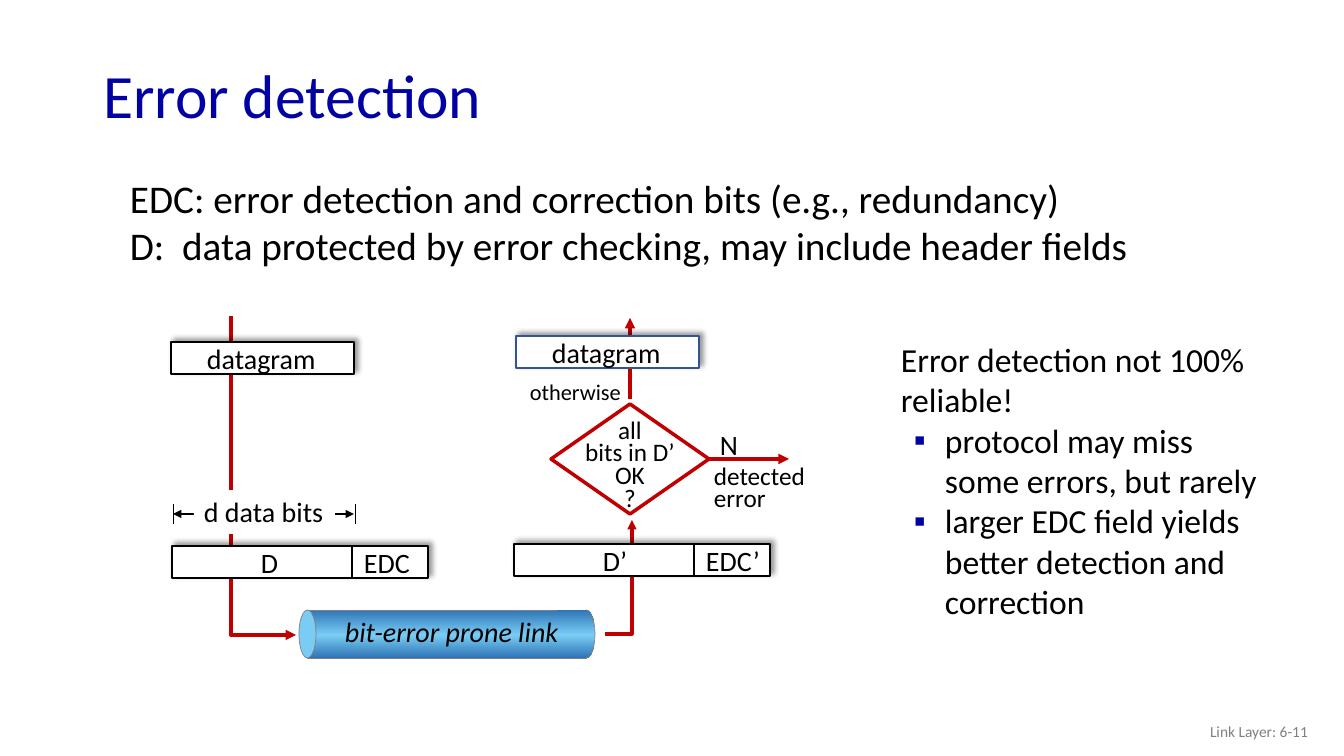
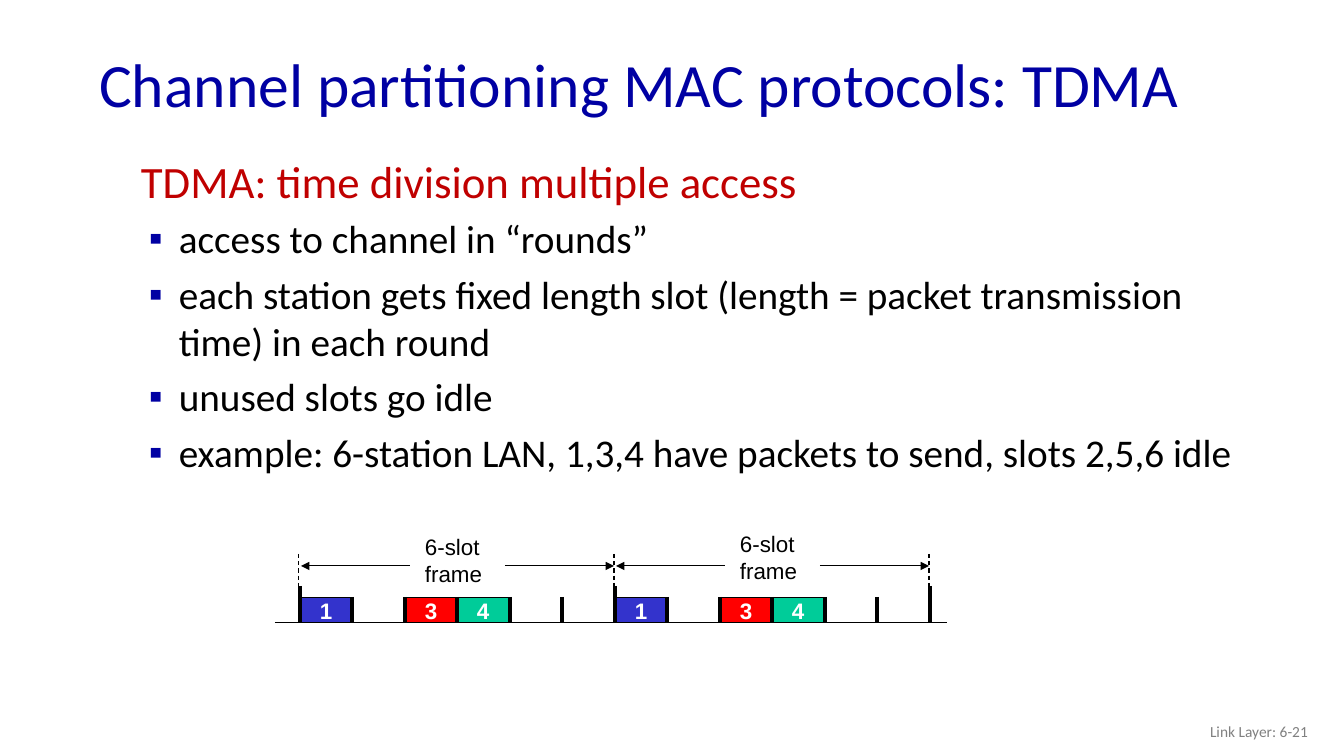
from copy import deepcopy

from lxml import etree
from pptx import Presentation
from pptx.dml.color import RGBColor
from pptx.enum.dml import MSO_LINE
from pptx.enum.shapes import MSO_CONNECTOR, MSO_SHAPE
from pptx.enum.text import MSO_ANCHOR, PP_ALIGN
from pptx.oxml.ns import qn
from pptx.util import Pt

PX = 9071  # EMU per px, 100.8 px to the inch
LEFT, CENTER, RIGHT = PP_ALIGN.LEFT, PP_ALIGN.CENTER, PP_ALIGN.RIGHT
MIDDLE = MSO_ANCHOR.MIDDLE
RECTANGLE, OVAL, DIAMOND = MSO_SHAPE.RECTANGLE, MSO_SHAPE.OVAL, MSO_SHAPE.DIAMOND
STRAIGHT = MSO_CONNECTOR.STRAIGHT
DASH = MSO_LINE.DASH

COLORS = {
    "navy": "0000A3",
    "red": "C00000",
    "black": "000000",
    "white": "FFFFFF",
    "grey": "808080",
    "outline_blue": "325491",
    "link_dark": "2E75B6",
    "link_light": "7ACCF4",
    "slot_blue": "3333CC",
    "slot_red": "FF0000",
    "slot_green": "00CC99",
}
RGB = {name: RGBColor.from_string(value) for name, value in COLORS.items()}


def add_text(slide, box, lines, size, color="black", wrap=False, paragraph_format=None, **font_format):
    """Add a text box with one paragraph per line, all formatted alike."""
    text_box = slide.shapes.add_textbox(*[value * PX for value in box])
    text_box.text_frame.word_wrap = wrap
    text_box.text_frame.text = "\n".join(lines)
    for paragraph in text_box.text_frame.paragraphs:
        for name, value in (paragraph_format or {}).items():
            setattr(paragraph, name, value)
        font = paragraph.runs[0].font
        for name, value in {"name": "Calibri", "size": Pt(size), **font_format}.items():
            setattr(font, name, value)
        font.color.rgb = RGB[color]
    return text_box


def style(shape, color, width, fill=None, ends=(), dash=None):
    """Set outline, fill and arrowheads, and take the theme shadow away."""
    if color:
        shape.line.color.rgb = RGB[color]
        shape.line.width = Pt(width)
    else:
        shape.line.fill.background()
    if dash:
        shape.line.dash_style = dash
    if fill:
        shape.fill.solid()
        shape.fill.fore_color.rgb = RGB[fill]
    properties = shape._element.spPr
    for end in ends:
        etree.SubElement(properties.find(qn("a:ln")), qn(f"a:{end}"), type="triangle")
    return etree.SubElement(properties, qn("a:effectLst"))


presentation = Presentation()
presentation.slide_width = 1344 * PX
presentation.slide_height = 756 * PX

# Titles and footers
slides = []
for title_text, left, top, page in (
    ("Error detection", 93, 49, "6-11"),
    ("Channel partitioning MAC protocols: TDMA", 89, 38, "6-21"),
):
    slide = presentation.slides.add_slide(presentation.slide_layouts[5])
    title = slide.shapes.title
    geometry = {"left": left, "top": top, "width": 1159, "height": 99}
    for name, value in geometry.items():
        setattr(title, name, value * PX)
    title.text_frame.text = title_text
    title.text_frame.vertical_anchor = MIDDLE
    paragraph = title.text_frame.paragraphs[0]
    paragraph.alignment = LEFT
    paragraph.line_spacing = 0.9
    for name, value in {"name": "Calibri", "size": Pt(44)}.items():
        setattr(paragraph.font, name, value)
    paragraph.font.color.rgb = RGB["navy"]
    footer = add_text(slide, (1016, 711, 302, 40), [f"Link Layer: {page}"], 11, "grey", True,
                      {"alignment": RIGHT})
    footer.text_frame.vertical_anchor = MIDDLE
    slides.append(slide)
error_slide, tdma_slide = slides

# Error detection: explanations
add_text(error_slide, (120, 169, 1088, 105), [
    "EDC: error detection and correction bits (e.g., redundancy)",
    "D:  data protected by error checking, may include header fields",
], 28, wrap=True)
reliability = add_text(error_slide, (891, 334, 380, 295), [
    "Error detection not 100% reliable!",
    "protocol may miss some errors, but rarely",
    "larger EDC field yields better detection and correction",
], 24, wrap=True)

# Error detection: red routes through sender and receiver
for start, corners, width in (
    ((231, 316), [(231, 635), (296, 635)], 2.5),
    ((605, 634), [(632, 634), (632, 520)], 2.25),
):
    builder = error_slide.shapes.build_freeform(*start, scale=PX)
    builder.add_line_segments(corners, close=False)
    route = builder.convert_to_shape()
    route.fill.background()
    style(route, "red", width, ends=["tailEnd"])

for start_x, start_y, end_x, end_y in ((709, 459, 789, 459), (630, 399, 630, 318)):
    arrow = error_slide.shapes.add_connector(
        STRAIGHT, start_x * PX, start_y * PX, end_x * PX, end_y * PX)
    style(arrow, "red", 2.5, ends=["tailEnd"])

# Error detection: datagrams and protected frames, as (text, offset, width) labels
datagram_labels = [("datagram", 26, 130)]
for left, top, width, outline, labels in (
    (171, 342, 183, "black", datagram_labels),
    (516, 336, 183, "outline_blue", datagram_labels),
    (172, 546, 256, "black", [("D", 79, 60), ("EDC", 182, 80)]),
    (514, 544, 256, "black", [("D’", 79, 60), ("EDC’", 182, 80)]),
):
    box = error_slide.shapes.add_shape(RECTANGLE, left * PX, top * PX, width * PX, 32 * PX)
    effects = style(box, outline, 1, "white")
    shadow = etree.SubElement(effects, qn("a:outerShdw"), blurRad="50800", dist="38100",
                              dir="18900000", algn="bl", rotWithShape="0")
    shadow_color = etree.SubElement(shadow, qn("a:srgbClr"), val=COLORS["black"])
    etree.SubElement(shadow_color, qn("a:alpha"), val="40000")
    for text, offset, text_width in labels:
        add_text(error_slide, (left + offset, top - 5, text_width, 44), [text], 20)
    if len(labels) > 1:
        divider = error_slide.shapes.add_connector(
            STRAIGHT, (left + 180) * PX, top * PX, (left + 180) * PX, (top + 32) * PX)
        style(divider, "black", 1.75)

# Error detection: width of the data bits
for start_x, start_y, end_x, end_y, width, ends in (
    (173, 514, 354, 514, 1.75, ["headEnd", "tailEnd"]),
    (173, 504, 173, 524, 0.5, []),
    (355, 504, 355, 524, 0.5, []),
):
    measure = error_slide.shapes.add_connector(
        STRAIGHT, start_x * PX, start_y * PX, end_x * PX, end_y * PX)
    style(measure, "black", width, ends=ends)
data_bits = add_text(error_slide, (194, 490, 141, 44), ["d data bits"], 20)
data_bits.fill.solid()
data_bits.fill.fore_color.rgb = RGB["white"]

# Error detection: link drawn as a pipe
for kind, left, width, outline, fill in (
    (RECTANGLE, 307, 279, "grey", None),
    (OVAL, 299, 17, "grey", "link_light"),
    (OVAL, 578, 17, "grey", None),
    (RECTANGLE, 557, 29, None, None),
):
    pipe = error_slide.shapes.add_shape(kind, left * PX, 610 * PX, width * PX, 48 * PX)
    style(pipe, outline, 0.5, fill)
    if not fill:
        pipe.fill.gradient()
        pipe.fill.gradient_angle = 270
        stop_list = pipe._element.spPr.find(".//" + qn("a:gsLst"))
        stop_list.append(deepcopy(stop_list[0]))
        stops = ((0, "link_dark"), (0.52, "link_light"), (1, "link_dark"))
        for stop, (position, color) in zip(pipe.fill.gradient_stops, stops):
            stop.position = position
            stop.color.rgb = RGB[color]
add_text(error_slide, (335, 610, 236, 44), ["bit-error prone link"], 20, italic=True)

# Error detection: decision
decision = error_slide.shapes.add_shape(DIAMOND, 551 * PX, 404 * PX, 158 * PX, 110 * PX)
style(decision, "red", 2.5, "white")
for box, lines, size, paragraph_format in (
    ((570, 416, 120, 103), ["all", "bits in D’", "OK", "?"], 18,
     {"alignment": CENTER, "line_spacing": 0.75}),
    ((710, 423, 50, 44), ["N"], 20, {}),
    ((704, 464, 118, 54), ["detected", "error"], 18, {"line_spacing": 0.7}),
    ((520, 381, 120, 30), ["otherwise"], 16, {"line_spacing": 0.7}),
):
    add_text(error_slide, box, lines, size, paragraph_format=paragraph_format)

# TDMA: explanation
tdma = add_text(tdma_slide, (131, 161, 1128, 323), [
    "TDMA: time division multiple access",
    "access to channel in “rounds”",
    "each station gets fixed length slot (length = packet transmission time) in each round",
    "unused slots go idle",
    "example: 6-station LAN, 1,3,4 have packets to send, slots 2,5,6 idle",
], 28, wrap=True, paragraph_format={"space_before": Pt(6)})
heading = tdma.text_frame.paragraphs[0]
heading.line_spacing = 0.75
heading.runs[0].font.size = Pt(32)
heading.runs[0].font.color.rgb = RGB["red"]

# TDMA: time line with two frames of six slots
FRAME_LEFT, FRAME_WIDTH, SLOTS, AXIS = 300, 315, 6, 623
boundaries = [FRAME_LEFT + index * FRAME_WIDTH // SLOTS for index in range(2 * SLOTS + 1)]
time_lines = [(275, AXIS, 947, AXIS, 0.75, [], None)]
for index, x in enumerate(boundaries):
    if index % SLOTS:
        time_lines.append((x, 597, x, AXIS, 2.25, [], None))
    else:
        time_lines.append((x, 586, x, AXIS, 3 if index else 2.25, [], None))
        time_lines.append((x - 1, 554, x - 1, 587, 0.75, [], DASH))

for frame, label_top in enumerate((528, 525)):
    left = FRAME_LEFT + frame * FRAME_WIDTH
    add_text(tdma_slide, (left + 115, label_top, 78, 64), ["6-slot", "frame"], 16, name="Arial")
    for start, end in ((205, 314), (110, 1)):
        time_lines.append((left + start, 566, left + end, 566, 0.75, ["tailEnd"], None))
    for station, color in ((1, "slot_blue"), (3, "slot_red"), (4, "slot_green")):
        x = boundaries[frame * SLOTS + station - 1]
        slot = tdma_slide.shapes.add_shape(RECTANGLE, x * PX, 598 * PX, 53 * PX, 25 * PX)
        style(slot, "black", 0.75, color)
        add_text(tdma_slide, (x + 10, 592, 36, 37), [str(station)], 16, "white",
                 name="Arial", bold=True)

for start_x, start_y, end_x, end_y, width, ends, dash in time_lines:
    time_line = tdma_slide.shapes.add_connector(
        STRAIGHT, start_x * PX, start_y * PX, end_x * PX, end_y * PX)
    style(time_line, "black", width, ends=ends, dash=dash)

# Bullets below the first paragraph of both explanations
for text_box, margin, hanging in ((reliability, 44, 31), (tdma, 38, 30)):
    for paragraph in text_box.text_frame.paragraphs[1:]:
        properties = paragraph._p.get_or_add_pPr()
        properties.set("marL", str(margin * PX))
        properties.set("indent", str(-hanging * PX))
        bullet_color = etree.SubElement(properties, qn("a:buClr"))
        etree.SubElement(bullet_color, qn("a:srgbClr"), val=COLORS["navy"])
        etree.SubElement(properties, qn("a:buFont"), typeface="Arial")
        etree.SubElement(properties, qn("a:buChar"), char="▪")

presentation.save("out.pptx")
